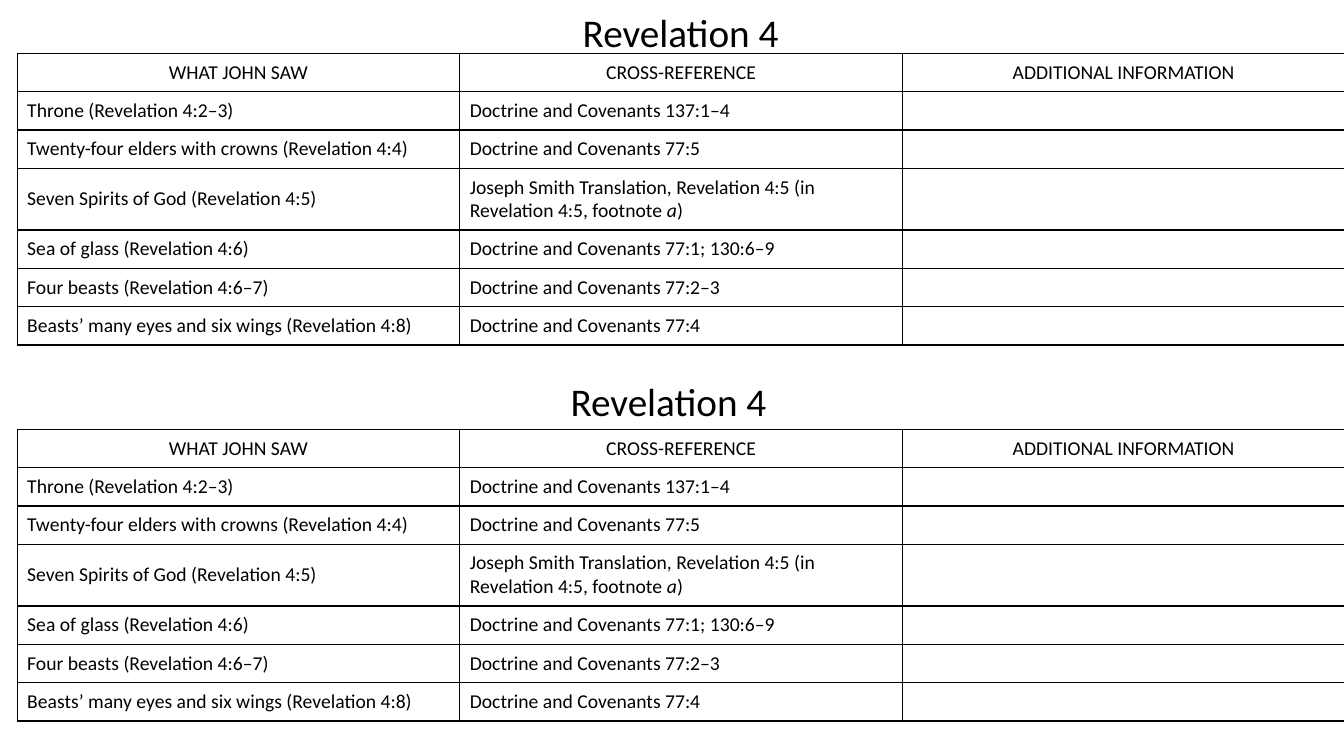
from typing import NamedTuple

from lxml import etree
from pptx import Presentation, util as u
from pptx.dml.color import RGBColor
from pptx.enum import text
from pptx.oxml.ns import qn

FONT = "Calibri"
BLACK = "000000"
COLUMN = 4.39
ROW = 0.38
TALL_ROW = 0.61
TABLE_LEFT = 0.17
TITLE_WIDTH, TITLE_HEIGHT = 2.62, 0.57
TITLE = "Revelation 4"
HEADINGS = ("WHAT JOHN SAW", "CROSS-REFERENCE", "ADDITIONAL INFORMATION")


class Vision(NamedTuple):
    seen: str
    reference: str
    footnote: str = ""
    closing: str = ""


class Chart(NamedTuple):
    title_left: float
    title_top: float
    table_top: float


VISIONS = (
    Vision("Throne (Revelation 4:2–3)", "Doctrine and Covenants 137:1–4"),
    Vision("Twenty-four elders with crowns (Revelation 4:4)", "Doctrine and Covenants 77:5"),
    Vision(
        "Seven Spirits of God (Revelation 4:5)",
        "Joseph Smith Translation, Revelation 4:5 (in Revelation 4:5, footnote ",
        "a",
        ")",
    ),
    Vision("Sea of glass (Revelation 4:6)", "Doctrine and Covenants 77:1; 130:6–9"),
    Vision("Four beasts (Revelation 4:6–7)", "Doctrine and Covenants 77:2–3"),
    Vision("Beasts’ many eyes and six wings (Revelation 4:8)", "Doctrine and Covenants 77:4"),
)
CHARTS = (Chart(5.44, 0.03, 0.53), Chart(5.32, 3.69, 4.26))


def color(value: str) -> RGBColor:
    return RGBColor.from_string(value)


def style_paragraph(para, size: float, align=None) -> None:
    para.font.name = FONT
    para.font.size = u.Pt(size)
    para.font.color.rgb = color(BLACK)
    para.alignment = align


def write_title(box, chart: Chart) -> None:
    box.left, box.top = u.Inches(chart.title_left), u.Inches(chart.title_top)
    box.width, box.height = u.Inches(TITLE_WIDTH), u.Inches(TITLE_HEIGHT)
    frame = box.text_frame
    frame.text = TITLE
    frame.word_wrap = True
    frame.auto_size = text.MSO_AUTO_SIZE.NONE
    frame.vertical_anchor = text.MSO_ANCHOR.TOP
    style_paragraph(frame.paragraphs[0], 28, text.PP_ALIGN.CENTER)


def outline_cell(cell) -> None:
    properties = cell._tc.get_or_add_tcPr()
    for side in ("a:lnL", "a:lnR", "a:lnT", "a:lnB"):
        line = etree.SubElement(properties, qn(side), w=str(u.Pt(1)))
        fill = etree.SubElement(line, qn("a:solidFill"))
        etree.SubElement(fill, qn("a:srgbClr"), val=BLACK)


def format_cell(cell, anchor, align=None) -> None:
    cell.margin_left = cell.margin_right = u.Inches(0.1)
    cell.margin_top = cell.margin_bottom = u.Inches(0.07)
    cell.vertical_anchor = anchor
    para = cell.text_frame.paragraphs[0]
    style_paragraph(para, 14, align)
    if not para.runs:
        etree.SubElement(para._p, qn("a:endParaRPr"), sz="1400")
    outline_cell(cell)
    cell.fill.background()


def add_vision_table(page, top: float) -> None:
    heights = [ROW] + [TALL_ROW if vision.footnote else ROW for vision in VISIONS]
    table = page.shapes.add_table(
        len(heights),
        len(HEADINGS),
        u.Inches(TABLE_LEFT),
        u.Inches(top),
        u.Inches(COLUMN * len(HEADINGS)),
        u.Inches(sum(heights)),
    ).table
    table.first_row = table.horz_banding = False
    for column in table.columns:
        column.width = u.Inches(COLUMN)
    for row, height in zip(table.rows, heights):
        row.height = u.Inches(height)

    for index, heading in enumerate(HEADINGS):
        cell = table.cell(0, index)
        cell.text = heading
        format_cell(cell, text.MSO_ANCHOR.BOTTOM, text.PP_ALIGN.CENTER)

    for index, vision in enumerate(VISIONS, 1):
        table.cell(index, 0).text = vision.seen
        reference = table.cell(index, 1)
        reference.text = vision.reference
        if vision.footnote:
            para = reference.text_frame.paragraphs[0]
            span = para.add_run()
            span.text = vision.footnote
            span.font.italic = True
            para.add_run().text = vision.closing
        for cell in table.rows[index].cells:
            format_cell(cell, text.MSO_ANCHOR.MIDDLE)


def main() -> None:
    deck = Presentation()
    deck.slide_width, deck.slide_height = u.Inches(13.33), u.Inches(7.5)
    page = deck.slides.add_slide(deck.slide_layouts[5])
    for index, chart in enumerate(CHARTS):
        add_vision_table(page, chart.table_top)
        box = page.shapes.add_textbox(0, 0, 0, 0) if index else page.shapes.title
        write_title(box, chart)
    deck.save("out.pptx")


if __name__ == "__main__":
    main()
